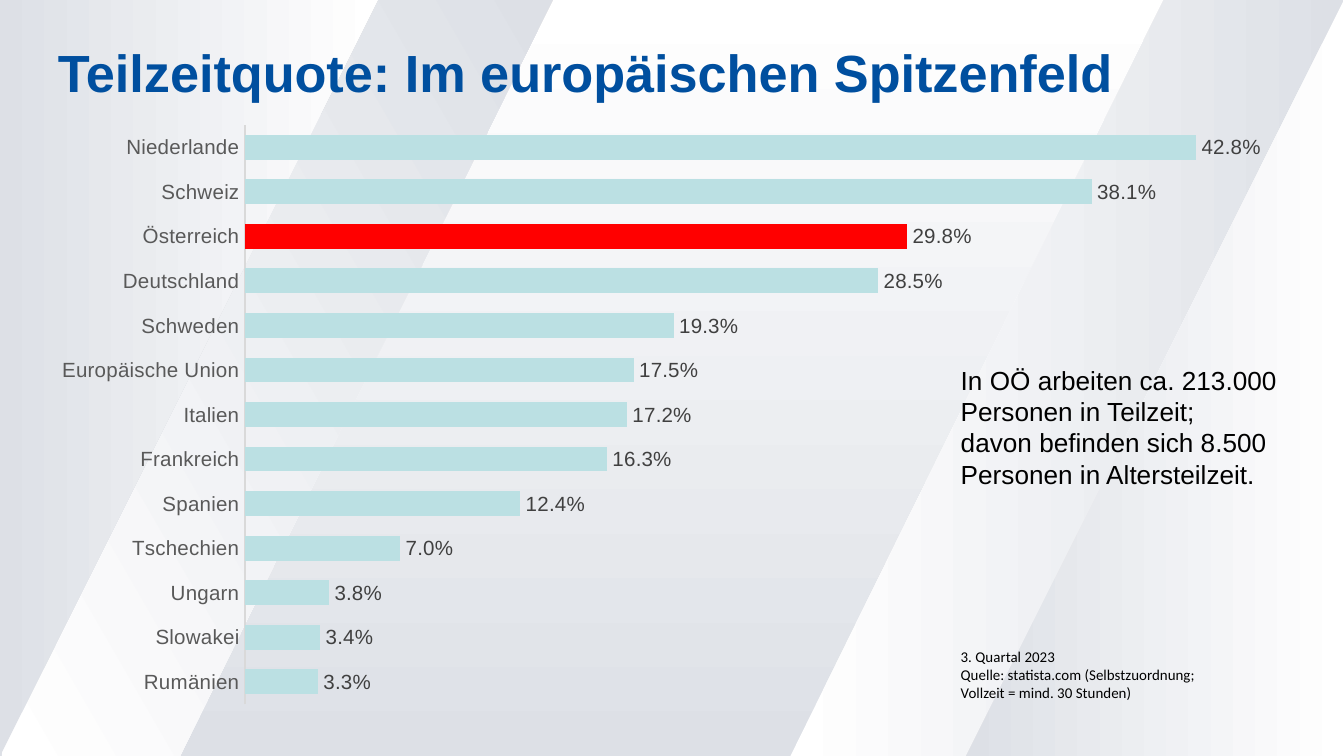
from lxml import etree
from pptx import Presentation
from pptx import util as u
from pptx.chart.data import CategoryChartData
from pptx.dml.color import RGBColor
from pptx.enum import chart as charts, shapes, text
from pptx.oxml.ns import qn

WIDTH, HEIGHT = 720, 405
LIGHT, GREY = "FFFFFF", "DDE0E6"
TITLE = "Teilzeitquote: Im europäischen Spitzenfeld"
QUOTAS = [
    ("Niederlande", 0.428), ("Schweiz", 0.381), ("Österreich", 0.298),
    ("Deutschland", 0.285), ("Schweden", 0.193), ("Europäische Union", 0.175),
    ("Italien", 0.172), ("Frankreich", 0.163), ("Spanien", 0.124),
    ("Tschechien", 0.07), ("Ungarn", 0.038), ("Slowakei", 0.034),
    ("Rumänien", 0.033),
]
HIGHLIGHT = "Österreich"
NOTES = [
    {"box": (507.6, 343.4, 153.4, 36),
     "lines": ["3. Quartal 2023\vQuelle: statista.com (Selbstzuordnung; Vollzeit = mind. 30 Stunden)"],
     "font": {"name": "Calibri", "size": 8, "color": "000000"}},
    {"box": (507.6, 191.5, 193, 74.9),
     "lines": ["In OÖ arbeiten ca. 213.000 Personen in Teilzeit;",
               "davon befinden sich 8.500 Personen in Altersteilzeit."],
     "font": {"name": "Arial", "size": 14, "color": "000000"}},
]
TRIANGLE = shapes.MSO_SHAPE.RIGHT_TRIANGLE
BACKGROUND = [
    {"preset": shapes.MSO_SHAPE.RECTANGLE, "box": (0, 0, WIDTH, HEIGHT),
     "stops": (LIGHT, GREY), "angle": 90},
    {"points": [(296, 405), (295, 0), (199.5, 0), (0, 405)],
     "stops": (LIGHT, GREY), "angle": 150, "rotation": 180},
    {"points": [(720, 405), (719.5, 0), (623.5, 0), (423.5, 405)],
     "stops": (LIGHT, GREY), "angle": 0},
    {"preset": TRIANGLE, "box": (517.7, 0, 202.3, HEIGHT),
     "stops": (LIGHT, GREY), "angle": 0, "flip": True},
    {"preset": TRIANGLE, "box": (0, 0, 202.3, HEIGHT),
     "stops": (GREY, LIGHT), "angle": 0, "flip": True, "rotation": 180},
]
CHART_BOX = (18.7, 60.5, 661.7, 323.3)
PLOT_LAYOUT = {"layoutTarget": "inner", "xMode": "edge", "yMode": "edge",
               "x": 0.17, "y": 0.02, "w": 0.81, "h": 0.96}


def rgb(value):
    return RGBColor.from_string(value)


def points(values):
    return [u.Pt(value) for value in values]


def format_font(font, values):
    for name, value in values.items():
        if name == "color":
            font.color.rgb = rgb(value)
        else:
            setattr(font, name, u.Pt(value) if name == "size" else value)


def add_background(slide, part):
    if "preset" in part:
        shape = slide.shapes.add_shape(part["preset"], *points(part["box"]))
    else:
        start, *rest = [points(point) for point in part["points"]]
        builder = slide.shapes.build_freeform(*start)
        builder.add_line_segments(rest)
        shape = builder.convert_to_shape()
    shape.shadow.inherit = False
    shape.line.fill.background()
    shape.fill.gradient()
    shape.fill.gradient_angle = (360 - part["angle"]) % 360
    for stop, color in zip(shape.fill.gradient_stops, part["stops"]):
        stop.color.rgb = rgb(color)
    if part.get("flip"):
        shape._element.spPr.find(qn("a:xfrm")).set("flipH", "1")
    shape.rotation = part.get("rotation", 0)


def add_quota_chart(slide):
    rows = QUOTAS[::-1]
    data = CategoryChartData(number_format="0.0%")
    data.categories = [country for country, quota in rows]
    data.add_series("Series 1", [quota for country, quota in rows])
    chart = slide.shapes.add_chart(
        charts.XL_CHART_TYPE.BAR_CLUSTERED, *points(CHART_BOX), data).chart
    chart.has_legend = chart.has_title = False
    format_font(chart.font, {"name": "Arial", "size": 10, "color": "000000"})

    axis = chart.category_axis
    axis.major_tick_mark = charts.XL_TICK_MARK.NONE
    axis.format.line.color.rgb = rgb("D9D9D9")
    axis.format.line.width = u.Pt(0.75)
    format_font(axis.tick_labels.font, {"name": "Arial", "size": 11, "color": "595959"})
    value_axis = chart.value_axis
    value_axis.minimum_scale, value_axis.maximum_scale = 0, 0.45
    value_axis.has_major_gridlines = False
    value_axis.visible = False

    plot = chart.plots[0]
    plot.gap_width, plot.overlap, plot.vary_by_categories = 80, -41, False
    series = plot.series[0]
    for index, (country, quota) in enumerate(rows):
        if country == HIGHLIGHT:
            fill = series.points[index].format.fill
            fill.solid()
            fill.fore_color.rgb = rgb("FF0000")
    series.format.fill.solid()
    series.format.fill.fore_color.rgb = rgb("BBE0E3")
    labels = series.data_labels
    labels.show_value = True
    labels.position = charts.XL_LABEL_POSITION.OUTSIDE_END
    labels.number_format = "0.0%"
    labels.number_format_is_linked = False
    format_font(labels.font, {"name": "Arial", "size": 11, "color": "404040"})

    plot_area = chart._chartSpace.find(".//" + qn("c:plotArea"))
    for layout in plot_area.findall(qn("c:layout")):
        plot_area.remove(layout)
    layout = etree.Element(qn("c:layout"))
    manual = etree.SubElement(layout, qn("c:manualLayout"))
    for name, value in PLOT_LAYOUT.items():
        etree.SubElement(manual, qn("c:" + name)).set("val", str(value))
    plot_area.insert(0, layout)


def format_title(slide):
    title = slide.shapes.title
    title.left, title.top, title.width, title.height = points((31, 21.6, 612, 90.7))
    frame = title.text_frame
    frame.text = TITLE
    frame.word_wrap = True
    frame.vertical_anchor = text.MSO_ANCHOR.TOP
    for side in ("left", "top", "right", "bottom"):
        setattr(frame, "margin_" + side, 0)
    paragraph = frame.paragraphs[0]
    paragraph.alignment = text.PP_ALIGN.LEFT
    format_font(paragraph.font, {"name": "Arial", "size": 28, "bold": True, "color": "004F9F"})
    slide.shapes._spTree.append(title._element)


def add_note(slide, note):
    frame = slide.shapes.add_textbox(*points(note["box"])).text_frame
    frame.word_wrap = True
    frame.auto_size = text.MSO_AUTO_SIZE.SHAPE_TO_FIT_TEXT
    frame.text = "\n".join(note["lines"])
    for paragraph in frame.paragraphs:
        format_font(paragraph.font, note["font"])


def main():
    presentation = Presentation()
    presentation.slide_width, presentation.slide_height = points((WIDTH, HEIGHT))
    slide = presentation.slides.add_slide(presentation.slide_layouts[5])
    for part in BACKGROUND:
        add_background(slide, part)
    add_quota_chart(slide)
    format_title(slide)
    for note in NOTES:
        add_note(slide, note)
    presentation.save("out.pptx")


if __name__ == "__main__":
    main()
